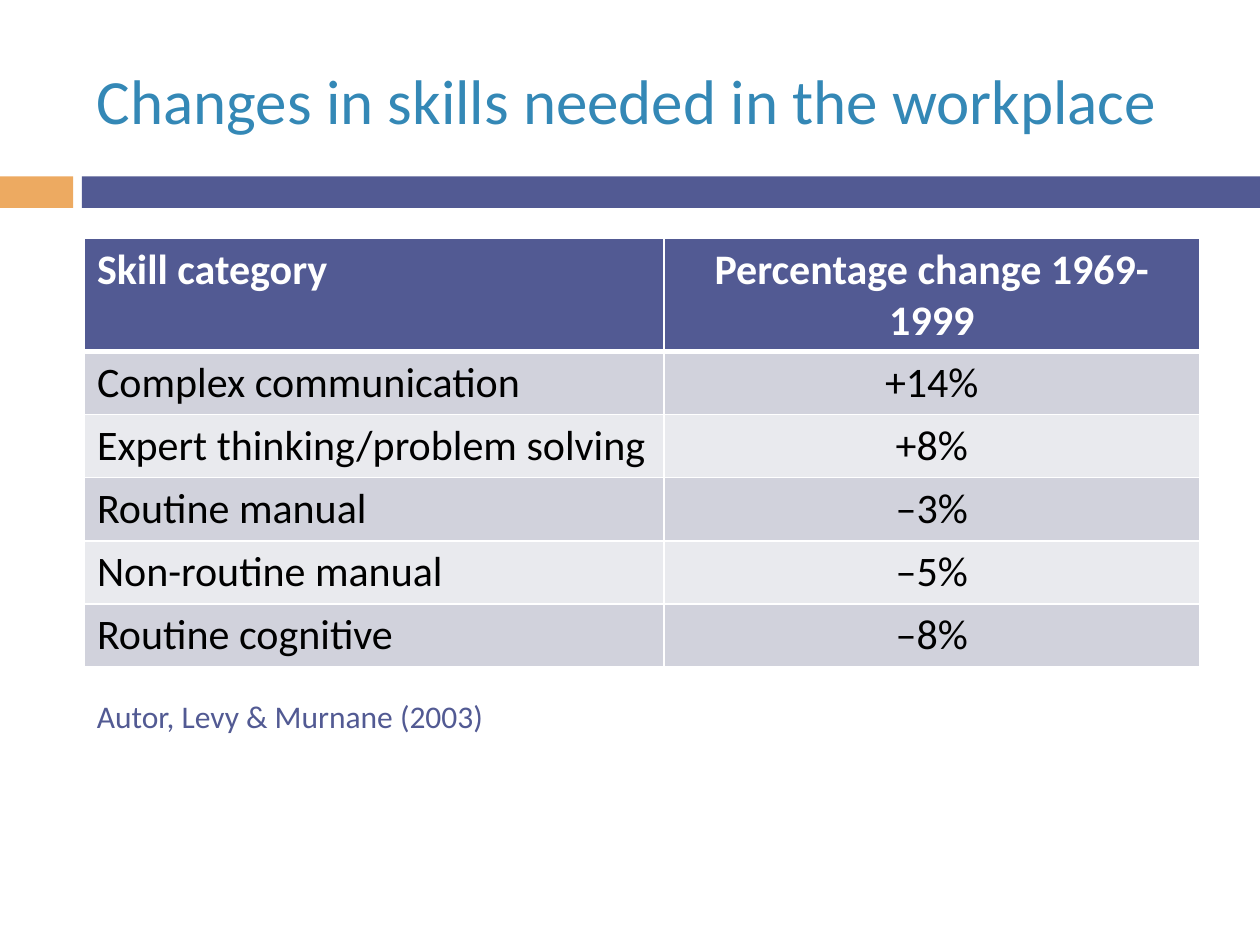
from lxml import etree
from pptx import Presentation
from pptx import util as u
from pptx.dml.color import RGBColor
from pptx.enum import shapes, text
from pptx.oxml import ns

INDIGO = RGBColor(0x52, 0x5A, 0x93)
ORANGE = RGBColor(0xED, 0xAA, 0x61)
BLUE = RGBColor(0x34, 0x88, 0xB6)
DARK_BAND = RGBColor(0xD1, 0xD2, 0xDC)
LIGHT_BAND = RGBColor(0xE9, 0xEA, 0xEE)
WHITE = RGBColor(0xFF, 0xFF, 0xFF)
BLACK = RGBColor(0, 0, 0)

SKILLS = [
    ("Skill category", "Percentage change 1969-1999"),
    ("Complex communication", "+14%"),
    ("Expert thinking/problem solving", "+8%"),
    ("Routine manual", "–3%"),
    ("Non-routine manual", "–5%"),
    ("Routine cognitive", "–8%"),
]


def write(frame, words, *, size, color, font, bold=False, align=text.PP_ALIGN.LEFT):
    para = frame.paragraphs[0]
    para.alignment = align
    span = para.add_run()
    span.text = words
    span.font.name = font
    span.font.size = u.Pt(size)
    span.font.bold = bold
    span.font.color.rgb = color


def add_border(cell, side, width):
    properties = cell._tc.get_or_add_tcPr()
    line = etree.SubElement(properties, ns.qn(f"a:ln{side}"), w=str(u.Pt(width)))
    fill = etree.SubElement(line, ns.qn("a:solidFill"))
    etree.SubElement(fill, ns.qn("a:srgbClr"), val=str(WHITE))


class SlideBuilder:
    def __init__(self, slide, font="Calibri"):
        self.slide = slide
        self.font = font

    def bar(self, left, top, width, height, color):
        box = self.slide.shapes.add_shape(
            shapes.MSO_SHAPE.RECTANGLE, *map(u.Inches, (left, top, width, height)))
        box.shadow.inherit = False
        box.fill.solid()
        box.fill.fore_color.rgb = color
        box.line.fill.background()

    def label(self, left, top, width, height, words, anchor=text.MSO_ANCHOR.TOP, **style):
        box = self.slide.shapes.add_textbox(*map(u.Inches, (left, top, width, height)))
        frame = box.text_frame
        frame.word_wrap = True
        frame.vertical_anchor = anchor
        write(frame, words, font=self.font, **style)

    def table(self, left, top, widths, heights, rows):
        table = self.slide.shapes.add_table(
            len(rows), len(widths),
            *map(u.Inches, (left, top, sum(widths), sum(heights)))).table
        for column, width in zip(table.columns, widths):
            column.width = u.Inches(width)
        for index, (height, values) in enumerate(zip(heights, rows)):
            table.rows[index].height = u.Inches(height)
            for column, words in enumerate(values):
                self.cell(table.cell(index, column), index, column, words)

    def cell(self, cell, row, column, words):
        header = row == 0
        borders = {"L": 1, "R": 1, "T": 3 if row == 1 else 1, "B": 3 if header else 1}
        for side, width in borders.items():
            add_border(cell, side, width)
        cell.fill.solid()
        band = DARK_BAND if row % 2 else LIGHT_BAND
        cell.fill.fore_color.rgb = INDIGO if header else band
        write(cell.text_frame, words, size=24, font=self.font, bold=header,
              color=WHITE if header else BLACK,
              align=text.PP_ALIGN.CENTER if column else text.PP_ALIGN.LEFT)


def main():
    deck = Presentation()
    deck.slide_width, deck.slide_height = u.Inches(10), u.Inches(7.5)
    builder = SlideBuilder(deck.slides.add_slide(deck.slide_layouts[6]))
    builder.bar(0, 1.4, 0.58, 0.25, ORANGE)
    builder.bar(0.65, 1.4, 9.35, 0.25, INDIGO)
    builder.label(0.67, 0.25, 8.92, 1.08, "Changes in skills needed in the workplace",
                  anchor=text.MSO_ANCHOR.MIDDLE, size=36, color=BLUE)
    builder.table(0.67, 1.89, [4.6, 4.25], [0.9] + [0.5] * 5, SKILLS)
    builder.label(0.67, 5.48, 3.58, 0.4, "Autor, Levy & Murnane (2003)",
                  size=18, color=INDIGO)
    deck.save("out.pptx")


if __name__ == "__main__":
    main()
